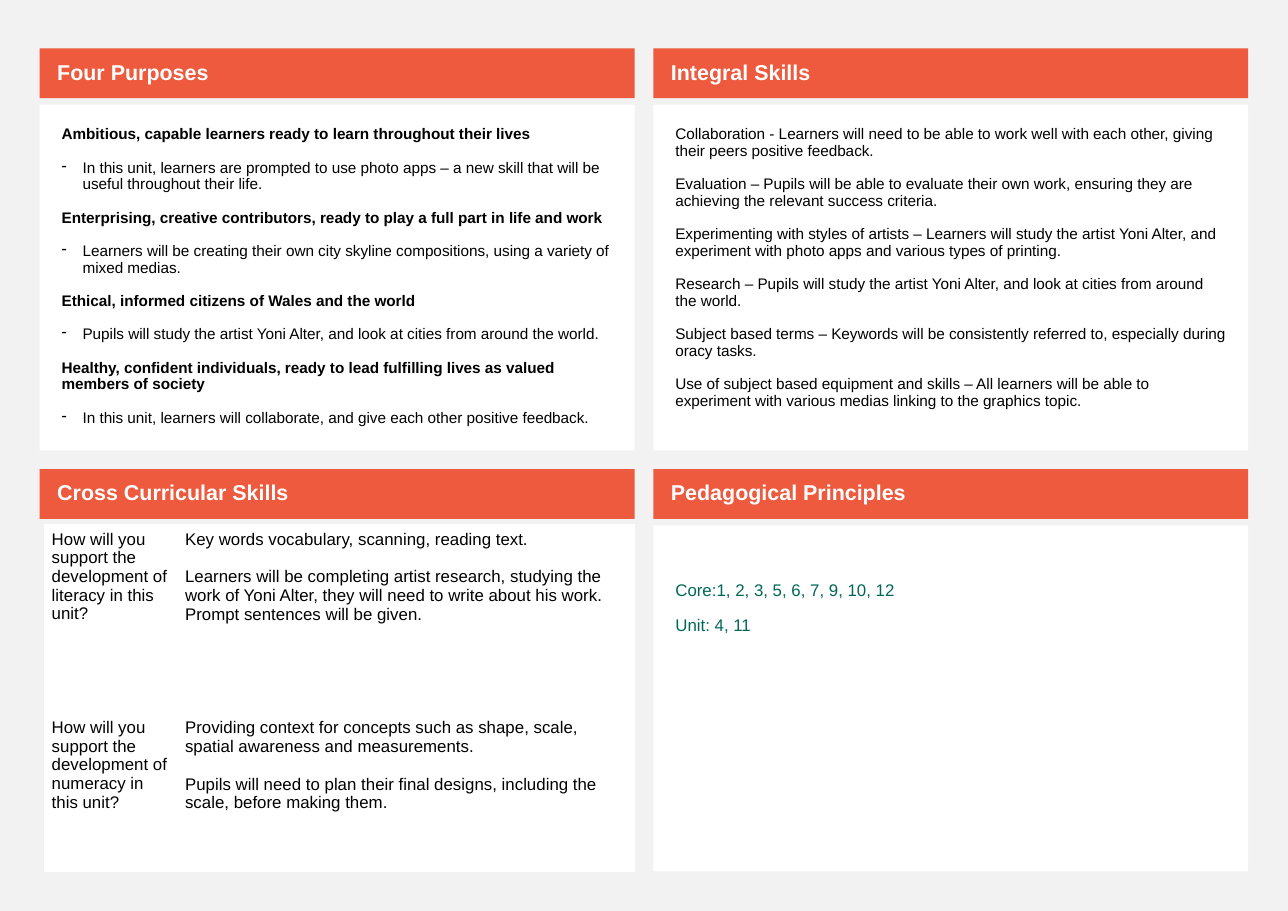
from lxml.etree import SubElement
from pptx import Presentation
from pptx.dml.color import RGBColor
from pptx.enum.shapes import MSO_SHAPE
from pptx.enum.text import MSO_ANCHOR, PP_ALIGN
from pptx.oxml.ns import qn
from pptx.util import Emu, Pt

PX = 9144  # 100 px to the inch
ORANGE, WHITE, BLACK, GREEN, GREY = "ED5A3E", "FFFFFF", "000000", "006758", "F2F2F2"
PANEL_W, HEADER_H, BODY_OFFSET, BODY_H = 540, 45, 51, 314
LEFT, RIGHT, TOP, BOTTOM = 36, 593, 44, 426

# Each purpose is followed by how the unit meets it
PURPOSES = [
    ("Ambitious, capable learners ready to learn throughout their lives",
     "In this unit, learners are prompted to use photo apps – a new skill that will be useful throughout their life."),
    ("Enterprising, creative contributors, ready to play a full part in life and work",
     "Learners will be creating their own city skyline compositions, using a variety of mixed medias."),
    ("Ethical, informed citizens of Wales and the world",
     "Pupils will study the artist Yoni Alter, and look at cities from around the world."),
    ("Healthy, confident individuals, ready to lead fulfilling lives as valued members of society",
     "In this unit, learners will collaborate, and give each other positive feedback."),
]
INTEGRAL_SKILLS = [
    "Collaboration - Learners will need to be able to work well with each other, giving their peers positive feedback.",
    "Evaluation – Pupils will be able to evaluate their own work, ensuring they are achieving the relevant success criteria.",
    "Experimenting with styles of artists – Learners will study the artist Yoni Alter, and experiment with photo apps and various types of printing.",
    "Research – Pupils will study the artist Yoni Alter, and look at cities from around the world.",
    "Subject based terms – Keywords will be consistently referred to, especially during oracy tasks.",
    "Use of subject based equipment and skills – All learners will be able to experiment with various medias linking to the graphics topic.",
]
CROSS_CURRICULAR = [
    (["How will you support the development of literacy in this unit?"],
     ["Key words vocabulary, scanning, reading text.",
      "Learners will be completing artist research, studying the work of Yoni Alter, they will need to write about his work. Prompt sentences will be given."]),
    (["How will you support the development of numeracy in this unit?"],
     ["Providing context for concepts such as shape, scale, spatial awareness and measurements.",
      "Pupils will need to plan their final designs, including the scale, before making them."]),
]
PRINCIPLES = ["Core:1, 2, 3, 5, 6, 7, 9, 10, 12", "Unit: 4, 11"]


def px(length):
    return Emu(length * PX)


def color(hex_string):
    return RGBColor.from_string(hex_string)


def add_text(frame, text, size=10, fill=BLACK, bold=False, dash=False, before=11, spacing=0.9):
    """Write one paragraph, using the frame's empty first one if it is free."""
    paragraph = frame.paragraphs[0]
    if paragraph.runs:
        paragraph = frame.add_paragraph()
    paragraph.alignment = PP_ALIGN.LEFT
    paragraph.space_before, paragraph.line_spacing = Pt(before), spacing
    run = paragraph.add_run()
    run.text = text
    font = run.font
    font.name, font.size, font.bold = "Arial", Pt(size), bold
    font.color.rgb = color(fill)
    if dash:
        properties = paragraph._p.get_or_add_pPr()
        properties.set("marL", str(px(19)))
        properties.set("indent", str(-px(19)))
        SubElement(properties, qn("a:buChar")).set("char", "-")


def set_insets(target, left, top, right, bottom):
    target.margin_left, target.margin_top = px(left), px(top)
    target.margin_right, target.margin_bottom = px(right), px(bottom)


def add_block(slide, x, y, height, fill, insets, anchor=MSO_ANCHOR.TOP):
    block = slide.shapes.add_shape(MSO_SHAPE.RECTANGLE, px(x), px(y), px(PANEL_W), px(height))
    block.shadow.inherit = False
    block.fill.solid()
    block.fill.fore_color.rgb = color(fill)
    block.line.fill.background()
    frame = block.text_frame
    frame.word_wrap, frame.vertical_anchor = True, anchor
    set_insets(frame, *insets)
    return frame


def add_header(slide, x, y, title):
    header = add_block(slide, x, y, HEADER_H, ORANGE, (16, 5, 10, 5), MSO_ANCHOR.MIDDLE)
    add_text(header, title, size=14, fill=WHITE, bold=True)


def add_panel(slide, x, y, title, top_inset=20):
    add_header(slide, x, y, title)
    return add_block(slide, x, y + BODY_OFFSET, BODY_H, WHITE, (20, top_inset, 20, 20))


def add_cell_borders(cell):
    properties = cell._tc.get_or_add_tcPr()
    for position, side in enumerate(("a:lnL", "a:lnR", "a:lnT", "a:lnB")):
        border = SubElement(properties, qn(side))
        border.set("w", str(Pt(0.75)))
        SubElement(SubElement(border, qn("a:solidFill")), qn("a:srgbClr")).set("val", WHITE)
        properties.insert(position, border)


def add_skills_table(slide, x, y):
    widths, heights = (121, 415), (171, 144)
    table = slide.shapes.add_table(2, 2, px(x), px(y), px(sum(widths)), px(sum(heights))).table
    for column, width in zip(table.columns, widths):
        column.width = px(width)
    for row, height, answers in zip(table.rows, heights, CROSS_CURRICULAR):
        row.height = px(height)
        for cell, paragraphs in zip(row.cells, answers):
            cell.fill.solid()
            cell.fill.fore_color.rgb = color(WHITE)
            set_insets(cell, 7, 5, 7, 5)
            add_cell_borders(cell)
            for index, text in enumerate(paragraphs):
                add_text(cell.text_frame, text, size=11, before=12.5 * index, spacing=1.0)


def main():
    presentation = Presentation()
    presentation.slide_width, presentation.slide_height = px(1169), px(827)
    slide = presentation.slides.add_slide(presentation.slide_layouts[6])
    slide.background.fill.solid()
    slide.background.fill.fore_color.rgb = color(GREY)

    # Top row
    purposes = add_panel(slide, LEFT, TOP, "Four Purposes")
    for purpose, practice in PURPOSES:
        add_text(purposes, purpose, bold=True)
        add_text(purposes, practice, dash=True)
    skills = add_panel(slide, RIGHT, TOP, "Integral Skills")
    for skill in INTEGRAL_SKILLS:
        add_text(skills, skill)

    # Bottom row
    add_header(slide, LEFT, BOTTOM, "Cross Curricular Skills")
    add_skills_table(slide, LEFT + 4, BOTTOM + 50)
    principles = add_panel(slide, RIGHT, BOTTOM, "Pedagogical Principles", top_inset=51)
    for principle in PRINCIPLES:
        add_text(principles, principle, size=11, fill=GREEN)

    presentation.save("out.pptx")


if __name__ == "__main__":
    main()
